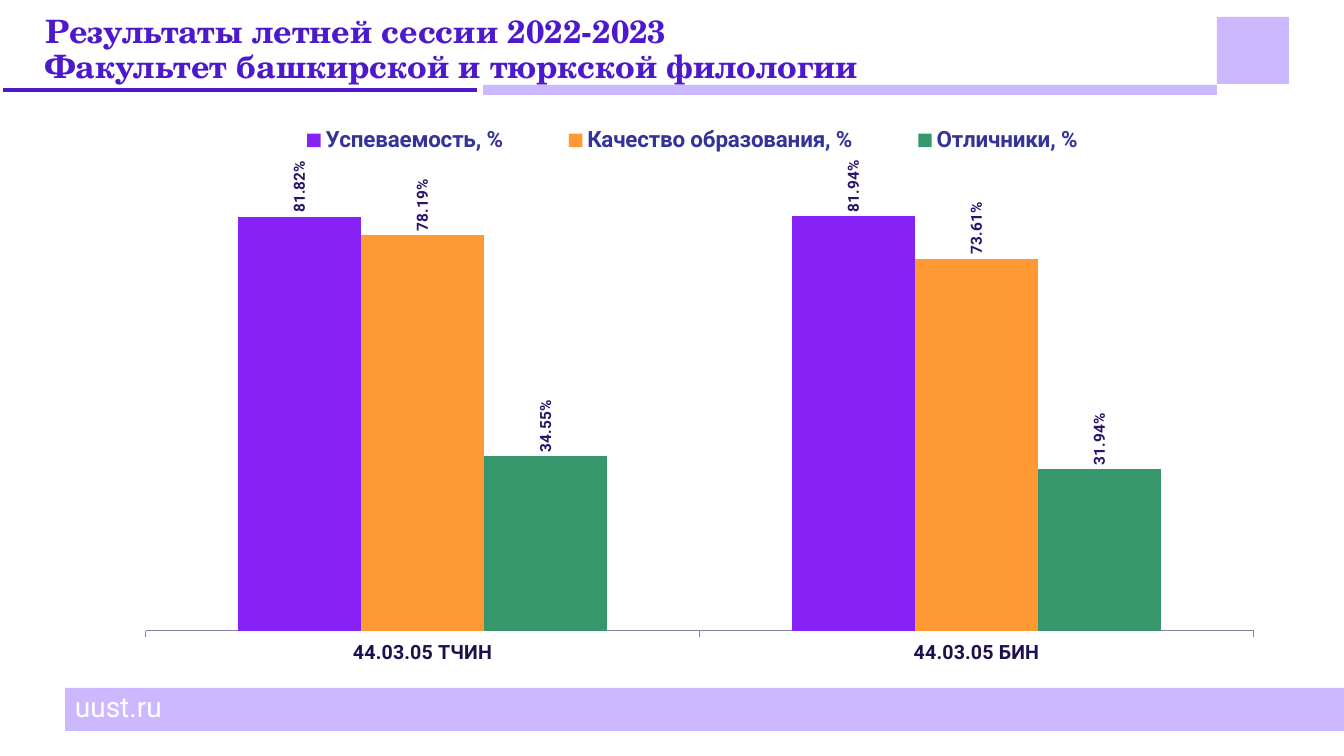
from lxml import etree
from pptx import Presentation
from pptx.chart.data import CategoryChartData
from pptx.dml.color import RGBColor
from pptx.enum.chart import (XL_CHART_TYPE, XL_LABEL_POSITION,
                             XL_LEGEND_POSITION, XL_TICK_MARK)
from pptx.enum.shapes import MSO_SHAPE
from pptx.enum.text import MSO_ANCHOR
from pptx.oxml.ns import qn
from pptx.util import Pt

PX = 914400 / 100.8
RECT = MSO_SHAPE.RECTANGLE
COLUMN = XL_CHART_TYPE.COLUMN_CLUSTERED
ABOVE = XL_LABEL_POSITION.OUTSIDE_END
TOP = XL_LEGEND_POSITION.TOP
NONE, OUT = XL_TICK_MARK.NONE, XL_TICK_MARK.OUTSIDE
UPPER = MSO_ANCHOR.TOP

HEX = {"lilac": "CBB8FF", "violet": "4D19CC", "white": "FFFFFF",
       "label": "2A1468", "axis": "1F0F4E", "legend": "333399", "line": "8A80A0",
       "pass": "8722F6", "good": "FF9933", "top": "35976B"}
RGB = {name: RGBColor.from_string(code) for name, code in HEX.items()}


def style(font, size, color, bold=True, name="Roboto"):
    for key, value in {"size": Pt(size), "bold": bold, "name": name}.items():
        setattr(font, key, value)
    font.color.rgb = RGB[color]


def layout(parent, index, box, inner=False):
    """Give a chart part a fixed place, as fractions of the chart."""
    for old in parent.findall(qn("c:layout")):
        parent.remove(old)
    node = etree.Element(qn("c:layout"))
    manual = etree.SubElement(node, qn("c:manualLayout"))
    rows = [("xMode", "edge"), ("yMode", "edge"), *zip("xywh", box)]
    if inner:
        rows.insert(0, ("layoutTarget", "inner"))
    for tag, value in rows:
        etree.SubElement(manual, qn("c:" + tag)).set("val", str(value))
    parent.insert(index, node)


deck = Presentation()
deck.slide_width, deck.slide_height = round(1344 * PX), round(756 * PX)
slide = deck.slides.add_slide(deck.slide_layouts[6])
shapes = slide.shapes

# Bands and corner square
bands = [(0, 85, 1217, 10, "lilac"), (65, 688, 1279, 43, "lilac"),
         (0, 85, 480, 10, "violet"), (1217, 17, 72, 67, "lilac")]
for *box, color in bands:
    band = shapes.add_shape(RECT, *(round(n * PX) for n in box))
    band.shadow.inherit = False
    band.fill.solid()
    band.fill.fore_color.rgb = RGB[color]
    if color == "violet":
        band.line.color.rgb = RGB["white"]
        band.line.width = Pt(4.5)
    else:
        band.line.fill.background()

# Title and site address
title = "Результаты летней сессии 2022-2023\vФакультет башкирской и тюркской филологии"
texts = [((36, 11, 836, 46), title, (23, "violet", True, "TeX Gyre Schola")),
         ((65, 688, 157, 42), "uust.ru", (20, "white", False))]
for box, text, form in texts:
    frame = shapes.add_textbox(*(round(n * PX) for n in box)).text_frame
    frame.word_wrap = True
    frame.vertical_anchor = UPPER
    para = frame.paragraphs[0]
    para.text = text
    para.line_spacing = 0.9
    style(para.font, *form)
    for run in para.runs:
        style(run.font, *form)

# Chart of session results
results = [("Успеваемость, %", (0.8182, 0.8194), "pass"),
           ("Качество образования, %", (0.7819, 0.7361), "good"),
           ("Отличники, %", (0.3455, 0.3194), "top")]
data = CategoryChartData(number_format="0.00%")
data.categories = ["44.03.05 ТЧИН", "44.03.05 БИН"]
for name, values, color in results:
    data.add_series(name, values)
place = (round(n * PX) for n in (117, 124, 1199, 544))
chart = shapes.add_chart(COLUMN, *place, data).chart
chart.has_title = False
style(chart.font, 18, "label", False)

plot = chart.plots[0]
plot.gap_width, plot.overlap = 150, 0
plot.vary_by_categories = False
for series, (name, values, color) in zip(plot.series, results):
    series.format.fill.solid()
    series.format.fill.fore_color.rgb = RGB[color]
    labels = series.data_labels
    form = {"show_value": True, "position": ABOVE,
            "number_format": "0.00%", "number_format_is_linked": False}
    for key, value in form.items():
        setattr(labels, key, value)
    style(labels.font, 11, "label")
    body = labels._element.find(qn("c:txPr")).find(qn("a:bodyPr"))
    body.set("rot", "-5400000")
    body.set("vert", "horz")

axis = chart.category_axis
axis.major_tick_mark, axis.minor_tick_mark = OUT, NONE
axis.format.line.color.rgb = RGB["line"]
axis.format.line.width = Pt(0.75)
style(axis.tick_labels.font, 14, "axis")

scale = chart.value_axis
scale.minimum_scale, scale.maximum_scale = 0, 0.9
scale.has_major_gridlines = False
scale.visible = False

chart.has_legend = True
legend = chart.legend
legend.position = TOP
legend.include_in_layout = False
style(legend.font, 16, "legend")
layout(legend._element, 1, (0.11, 0, 0.74, 0.06))
area = chart._chartSpace.find(qn("c:chart")).find(qn("c:plotArea"))
layout(area, 0, (0.024, 0.095, 0.924, 0.837), inner=True)

deck.save("out.pptx")
